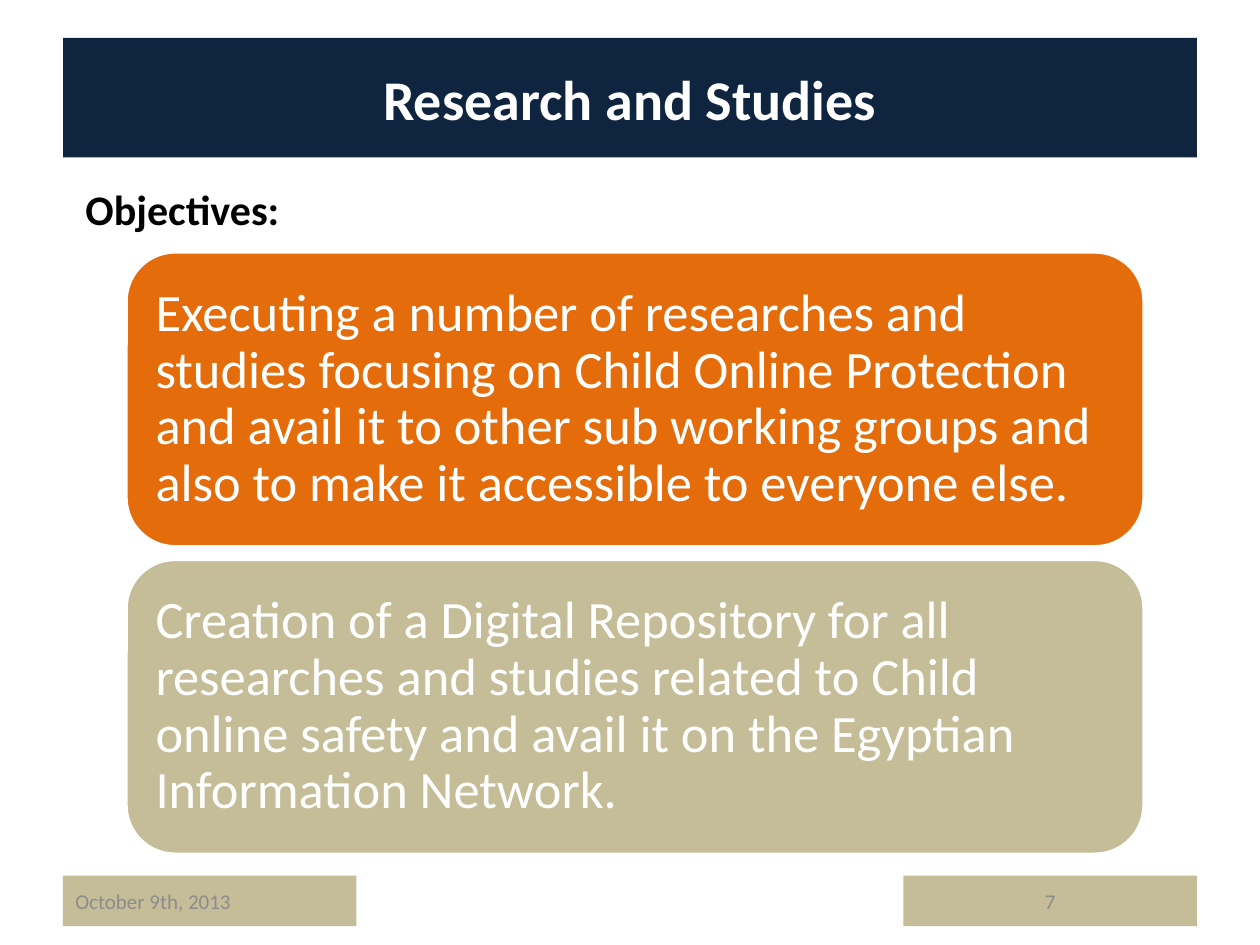
from dataclasses import dataclass

from pptx import Presentation
from pptx.dml.color import RGBColor
from pptx.enum.shapes import MSO_SHAPE
from pptx.enum.text import MSO_ANCHOR, PP_ALIGN
from pptx.util import Inches, Pt


@dataclass(frozen=True)
class Theme:
    font: str = "Calibri"
    navy: str = "0F243E"
    orange: str = "E46C0A"
    sand: str = "C4BD97"
    white: str = "FFFFFF"
    black: str = "000000"
    gray: str = "8C8C8C"
    title: int = 32
    card: int = 30
    head: int = 24
    foot: int = 12


T = Theme()
WIDE, HIGH = 10, 7.5
EDGE = 0.05 * WIDE

TITLE = "Research and Studies"
HEAD = "Objectives:"
CARDS = [
    ("Executing a number of researches and studies focusing on Child Online "
     "Protection and avail it to other sub working groups and also to make it "
     "accessible to everyone else.", T.orange),
    ("Creation of a Digital Repository for all researches and studies related "
     "to Child online safety and avail it on the Egyptian Information Network.",
     T.sand),
]
FOOT_W = 2.33
FOOT = [
    ("October 9th, 2013", EDGE, PP_ALIGN.LEFT),
    ("7", WIDE - EDGE - FOOT_W, PP_ALIGN.CENTER),
]
CARD_LEFT, CARD_TOP, CARD_W, CARD_H, CARD_STEP = 1, 2, 8.08, 2.34, 2.44


def paint(shape, color):
    shape.fill.solid()
    shape.fill.fore_color.rgb = RGBColor.from_string(color)


def write(shape, text, size, color, align=PP_ALIGN.LEFT, bold=False):
    """Add one styled run to the shape and return its paragraph."""
    frame = shape.text_frame
    frame.word_wrap = True
    frame.vertical_anchor = MSO_ANCHOR.MIDDLE
    para = frame.paragraphs[0]
    para.alignment = align
    run = para.add_run()
    run.text = text
    run.font.name = T.font
    run.font.size = Pt(size)
    run.font.bold = bold
    run.font.color.rgb = RGBColor.from_string(color)
    return para


def add_block(slide, kind, box, color):
    shape = slide.shapes.add_shape(kind, *map(Inches, box))
    shape.shadow.inherit = False
    paint(shape, color)
    shape.line.fill.background()
    return shape


def add_title(slide):
    title = slide.shapes.title
    title.left, title.top = Inches(EDGE), Inches(0.3)
    title.width, title.height = Inches(WIDE - 2 * EDGE), Inches(0.95)
    paint(title, T.navy)
    write(title, TITLE, T.title, T.white, PP_ALIGN.CENTER, True)


def add_cards(slide):
    for row, (text, color) in enumerate(CARDS):
        box = CARD_LEFT, CARD_TOP + row * CARD_STEP, CARD_W, CARD_H
        card = add_block(slide, MSO_SHAPE.ROUNDED_RECTANGLE, box, color)
        card.line.color.rgb = RGBColor.from_string(T.white)
        card.line.width = Pt(2)
        frame = card.text_frame
        frame.margin_left = frame.margin_right = Inches(0.12)
        frame.margin_top = frame.margin_bottom = Inches(0.12)
        write(card, text, T.card, T.white).line_spacing = 0.9


def add_foot(slide):
    for text, left, align in FOOT:
        box = left, 6.95, FOOT_W, 0.4
        cell = add_block(slide, MSO_SHAPE.RECTANGLE, box, T.sand)
        write(cell, text, T.foot, T.gray, align)


def main():
    deck = Presentation()
    deck.slide_width, deck.slide_height = Inches(WIDE), Inches(HIGH)
    slide = deck.slides.add_slide(deck.slide_layouts[5])
    add_title(slide)
    add_foot(slide)
    add_cards(slide)
    head = slide.shapes.add_textbox(*map(Inches, (0.58, 1.41, 1.75, 0.5)))
    write(head, HEAD, T.head, T.black, bold=True)
    deck.save("out.pptx")


if __name__ == "__main__":
    main()
